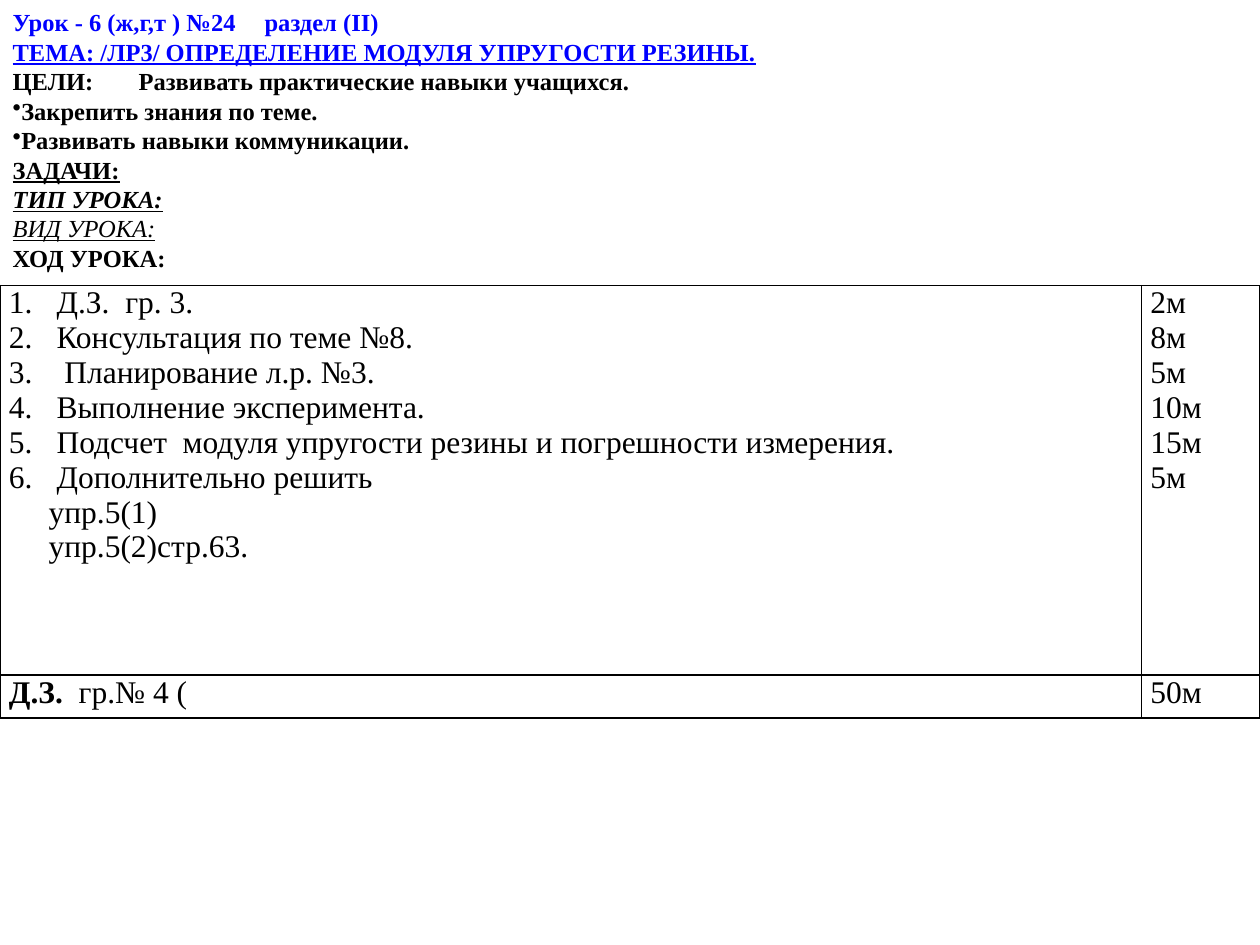
import dataclasses
import typing

import lxml.etree
import pptx
import pptx.dml.color
import pptx.enum.text
import pptx.oxml.ns
import pptx.util

Cm = pptx.util.Cm
Pt = pptx.util.Pt
qn = pptx.oxml.ns.qn
BLUE = pptx.dml.color.RGBColor(0, 0, 255)
BLACK = pptx.dml.color.RGBColor(0, 0, 0)
FACE = "Times New Roman"


@dataclasses.dataclass
class Line:
    text: str
    size: float = 18
    color: pptx.dml.color.RGBColor = BLACK
    bold: bool = False
    slant: bool = False
    under: bool = False
    mark: str = ""
    left: float = 0
    hang: float = 0
    tab: float = 0
    pitch: typing.Optional[float] = None
    lead: str = ""


def head(text: str, bold: bool = True, **rest: typing.Any) -> Line:
    return Line(text, size=14, bold=bold, pitch=16.8, **rest)


def item(text: str) -> Line:
    return Line(text, mark="1.", left=0.96, hang=0.96)


HEADS = [
    head("Урок - 6 (ж,г,т ) №24\tраздел (II)", color=BLUE, tab=6.96),
    head("ТЕМА: /ЛР3/ ОПРЕДЕЛЕНИЕ МОДУЛЯ УПРУГОСТИ РЕЗИНЫ.", color=BLUE, under=True),
    head("ЦЕЛИ:\tРазвивать практические навыки учащихся.", tab=2.24),
    head("Закрепить знания по теме.", mark="•"),
    head("Развивать навыки коммуникации.", mark="•"),
    head("ЗАДАЧИ:", under=True),
    head("ТИП УРОКА:", slant=True, under=True),
    head("ВИД УРОКА:", bold=False, slant=True, under=True),
    head("ХОД УРОКА:"),
]
STEPS = [
    item("Д.З.  гр. 3."),
    item("Консультация по теме №8."),
    item(" Планирование л.р. №3."),
    item("Выполнение эксперимента."),
    item("Подсчет  модуля упругости резины и погрешности измерения."),
    item("Дополнительно решить"),
    Line("упр.5(1)", left=0.8),
    Line("упр.5(2)стр.63.", left=0.8),
]
TIMES = [Line(time) for time in ("2м", "8м", "5м", "10м", "15м", "5м")]
GRID = [[STEPS, TIMES], [[Line("гр.№ 4 (", lead="Д.З.  ")], [Line("50м")]]]
WIDTHS = [23.01, 2.39]
HEIGHTS = [7.85, 0.86]


def style(para: typing.Any, line: Line) -> None:
    props = para._p.get_or_add_pPr()
    props.set("marL", str(Cm(line.left)))
    props.set("indent", str(-Cm(line.hang)))
    if line.mark == "•":
        lxml.etree.SubElement(props, qn("a:buChar"), char=line.mark)
    elif line.mark:
        lxml.etree.SubElement(props, qn("a:buAutoNum"), type="arabicPeriod")
    if line.tab:
        tabs = lxml.etree.SubElement(props, qn("a:tabLst"))
        lxml.etree.SubElement(tabs, qn("a:tab"), pos=str(Cm(line.tab)), algn="l")
    para.alignment = pptx.enum.text.PP_ALIGN.LEFT
    if line.pitch:
        para.line_spacing = Pt(line.pitch)
    font = para.font
    font.name = FACE
    font.size = Pt(line.size)
    font.bold = line.bold
    font.italic = line.slant
    font.underline = line.under
    font.color.rgb = line.color


def write(frame: typing.Any, lines: list[Line]) -> None:
    for rank, line in enumerate(lines):
        para = frame.add_paragraph() if rank else frame.paragraphs[0]
        style(para, line)
        if line.lead:
            lead = para.add_run()
            lead.text = line.lead
            lead.font.bold = True
        para.add_run().text = line.text


def border(cell: typing.Any) -> None:
    props = cell._tc.get_or_add_tcPr()
    for side in ("lnL", "lnR", "lnT", "lnB"):
        edge = lxml.etree.SubElement(props, qn("a:" + side), w=str(Pt(1)))
        fill = lxml.etree.SubElement(edge, qn("a:solidFill"))
        lxml.etree.SubElement(fill, qn("a:srgbClr"), val=str(BLACK))


def draw_head(slide: typing.Any) -> None:
    title = slide.shapes.title
    title.left, title.top = Cm(0), Cm(0)
    title.width, title.height = Cm(25.4), Cm(5.64)
    frame = title.text_frame
    frame.word_wrap = True
    frame.auto_size = pptx.enum.text.MSO_AUTO_SIZE.NONE
    frame.vertical_anchor = pptx.enum.text.MSO_ANCHOR.MIDDLE
    write(frame, HEADS)


def draw_plan(slide: typing.Any) -> None:
    table = slide.shapes.add_table(
        len(GRID), len(WIDTHS), Cm(0), Cm(5.76), Cm(sum(WIDTHS)), Cm(sum(HEIGHTS))
    ).table
    table.first_row = False
    table.horz_banding = False
    for col, width in zip(table.columns, WIDTHS):
        col.width = Cm(width)
    for row, height, texts in zip(table.rows, HEIGHTS, GRID):
        row.height = Cm(height)
        for cell, lines in zip(row.cells, texts):
            cell.margin_left = cell.margin_right = Cm(0.18)
            cell.margin_top = cell.margin_bottom = Cm(0)
            border(cell)
            cell.fill.background()
            write(cell.text_frame, lines)


def main() -> None:
    deck = pptx.Presentation()
    deck.slide_width, deck.slide_height = Cm(25.4), Cm(19.05)
    slide = deck.slides.add_slide(deck.slide_layouts[5])
    draw_head(slide)
    draw_plan(slide)
    deck.save("out.pptx")


if __name__ == "__main__":
    main()
